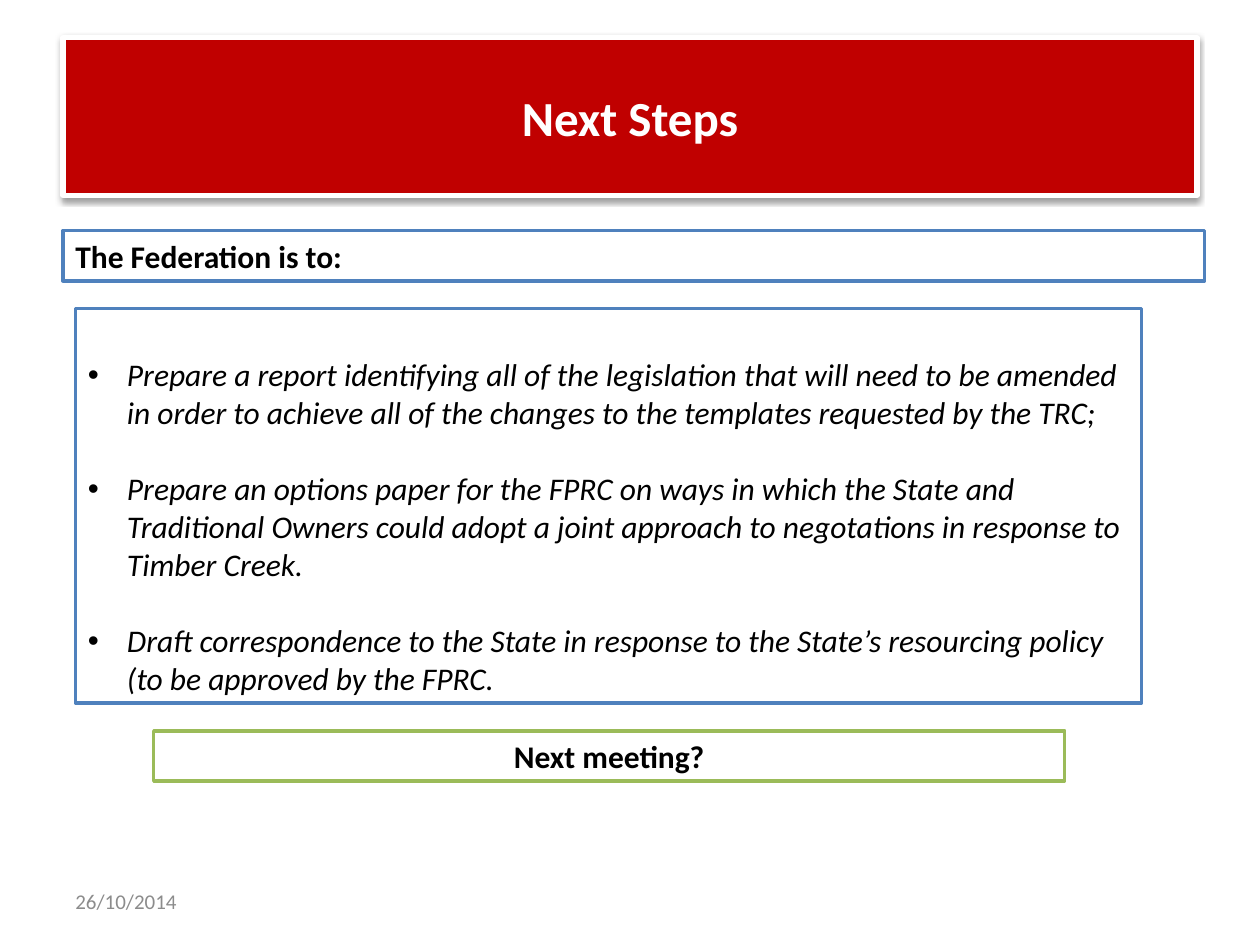
from lxml.etree import SubElement
from pptx import Presentation
from pptx.dml.color import RGBColor as RGB
from pptx.enum.shapes import MSO_SHAPE as SHAPE
from pptx.enum.text import MSO_ANCHOR as ANCHOR, PP_ALIGN as ALIGN
from pptx.oxml.ns import qn
from pptx.util import Inches, Pt

THEME = dict(
    font="Calibri", title=28, body=18, date=12,
    red="C00000", white="FFFFFF", black="000000",
    blue="4F81BD", green="9BBB59", grey="8C8C8C",
)

prs = Presentation()
prs.slide_width, prs.slide_height = Inches(10), Inches(7.5)
COL, ROW = prs.slide_width / 100, prs.slide_height / 75
s = prs.slides.add_slide(prs.slide_layouts[5])


def place(sp, left, top, width, height, fill, line, weight):
    """Set position in grid columns and rows, then fill and outline."""
    sp.left, sp.width = int(left * COL), int(width * COL)
    sp.top, sp.height = int(top * ROW), int(height * ROW)
    sp.fill.solid()
    sp.fill.fore_color.rgb = RGB.from_string(THEME[fill])
    sp.line.color.rgb = RGB.from_string(THEME[line])
    sp.line.width = Pt(weight)


def write(sp, *texts, size="body", color="black", bold=False, italic=False,
          align=ALIGN.LEFT, anchor=ANCHOR.TOP, bullet=None, before=0):
    tf = sp.text_frame
    tf.word_wrap, tf.vertical_anchor = True, anchor
    for i, text in enumerate(texts):
        p = tf.add_paragraph() if i else tf.paragraphs[0]
        p.alignment, p.space_before = align, Pt(before)
        if bullet:
            pPr = p._p.get_or_add_pPr()
            indent = Inches(0.31)
            pPr.set("marL", str(indent))
            pPr.set("indent", str(-indent))
            SubElement(pPr, qn("a:buFont"), typeface="Arial")
            SubElement(pPr, qn("a:buChar"), char=bullet)
        r = p.add_run()
        r.text = text
        r.font.name, r.font.size = THEME["font"], Pt(THEME[size])
        r.font.bold, r.font.italic = bold, italic
        r.font.color.rgb = RGB.from_string(THEME[color])


# Title banner with a soft shadow below it
title = s.shapes.title
place(title, 5, 3, 90, 12.5, "red", "white", 3)
write(title, "Next Steps", size="title", color="white", bold=True,
      align=ALIGN.CENTER, anchor=ANCHOR.MIDDLE)
effects = SubElement(title._element.spPr, qn("a:effectLst"))
shadow = SubElement(effects, qn("a:outerShdw"), blurRad=str(Pt(3.1)),
                    dist=str(Pt(1.6)), dir="5400000", rotWithShape="0")
tint = SubElement(shadow, qn("a:srgbClr"), val=THEME["black"])
SubElement(tint, qn("a:alpha"), val="38000")

# Outlined boxes: heading, tasks, closing question
tasks = [
    "Prepare a report identifying all of the legislation that will need to be "
    "amended in order to achieve all of the changes to the templates requested "
    "by the TRC;",
    "Prepare an options paper for the FPRC on ways in which the State and "
    "Traditional Owners could adopt a joint approach to negotations in response "
    "to Timber Creek.",
    "Draft correspondence to the State in response to the State’s resourcing "
    "policy (to be approved by the FPRC.",
]
boxes = [
    ((5, 18.3, 90.6, 4), "blue", ["The Federation is to:"], dict(bold=True)),
    ((6, 24.5, 84.6, 31.3), "blue", tasks,
     dict(italic=True, bullet="•", before=22, anchor=ANCHOR.BOTTOM)),
    ((12.2, 58, 72.3, 4), "green", ["Next meeting?"],
     dict(bold=True, align=ALIGN.CENTER)),
]
for area, line, texts, style in boxes:
    sp = s.shapes.add_shape(SHAPE.RECTANGLE, 0, 0, 0, 0)
    sp.shadow.inherit = False
    place(sp, *area, "white", line, 2)
    write(sp, *texts, **style)

date = s.shapes.add_textbox(int(5 * COL), int(69.5 * ROW),
                            int(23.3 * COL), int(4 * ROW))
write(date, "26/10/2014", size="date", color="grey", anchor=ANCHOR.MIDDLE)

prs.save("out.pptx")
